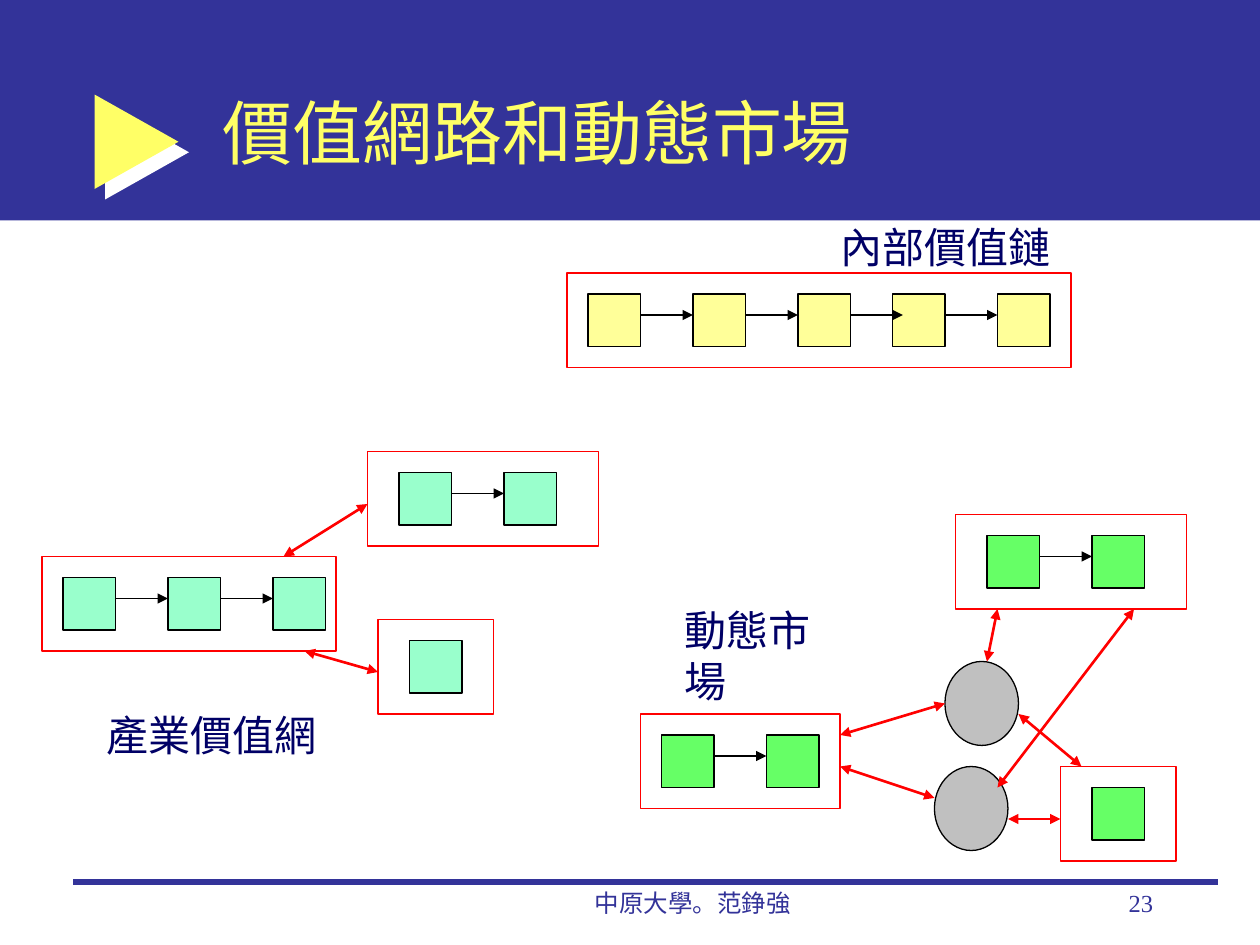
from typing import NamedTuple, Optional

from lxml.etree import SubElement
from pptx import Presentation
from pptx.dml.color import RGBColor
from pptx.enum.shapes import MSO_CONNECTOR, MSO_SHAPE
from pptx.enum.text import MSO_ANCHOR, MSO_AUTO_SIZE, PP_ALIGN
from pptx.oxml import parse_xml
from pptx.oxml.ns import nsdecls, qn
from pptx.shapes.autoshape import Shape
from pptx.slide import Slide
from pptx.util import Pt

INDIGO = RGBColor(0x33, 0x33, 0x99)
NAVY = RGBColor(0x00, 0x00, 0x66)
BRIGHT_YELLOW = RGBColor(0xFF, 0xFF, 0x66)
PALE_YELLOW = RGBColor(0xFF, 0xFF, 0x99)
MINT = RGBColor(0x99, 0xFF, 0xCC)
GREEN = RGBColor(0x66, 0xFF, 0x66)
GREY = RGBColor(0xC0, 0xC0, 0xC0)
RED = RGBColor(0xFF, 0x00, 0x00)
BLACK = RGBColor(0x00, 0x00, 0x00)

TITLE_FONT = "Noto Sans CJK SC"
TEXT_FONT = "Times New Roman"

STEP_SIZE = 30
STEP_GAP = 30
STEP_INSET = 12
ARROW_INSET = 24
CHAIN_HEIGHT = 54
THIN = 0.75


class Area(NamedTuple):
    left: float
    top: float
    width: float
    height: float


class Chain(NamedTuple):
    """A framed row of activities, each pointing to the next."""
    left: float
    top: float
    width: float
    step_lefts: tuple[float, ...]
    color: RGBColor


class Link(NamedTuple):
    x1: float
    y1: float
    x2: float
    y2: float


class Label(NamedTuple):
    text: str
    area: Area
    size: float
    color: RGBColor
    align: PP_ALIGN = PP_ALIGN.LEFT
    wrap: bool = True


CHAINS = (
    Chain(324, 156, 288, (336, 396, 456, 510, 570), PALE_YELLOW),
    Chain(24, 318, 168, (36, 96, 156), MINT),
    Chain(210, 258, 132, (228, 288), MINT),
    Chain(216, 354, 66, (234,), MINT),
    Chain(366, 408, 114, (378, 438), GREEN),
    Chain(546, 294, 132, (564, 624), GREEN),
    Chain(606, 438, 66, (624,), GREEN),
)
MARKETS = (Area(540, 378, 42, 48), Area(534, 438, 42, 48))
LINKS = (
    Link(162, 318, 210, 288),
    Link(174, 372, 216, 384),
    Link(480, 420, 540, 402),
    Link(480, 438, 534, 456),
    Link(564, 378, 570, 348),
    Link(582, 408, 618, 438),
    Link(576, 468, 606, 468),
    Link(570, 450, 648, 348),
)
LABELS = (
    Label("內部價值鏈", Area(473, 123, 135, 36), 24, NAVY, wrap=False),
    Label("產業價值網", Area(54, 402, 135, 36), 24, NAVY, wrap=False),
    Label("動態市場", Area(384, 342, 110, 36), 24, NAVY, wrap=False),
    Label("中原大學。范錚強", Area(282, 504, 228, 36), 14, INDIGO, PP_ALIGN.CENTER),
    Label("23", Area(516, 504, 150, 36), 14, INDIGO, PP_ALIGN.RIGHT),
)


def add_figure(slide: Slide, preset: MSO_SHAPE, area: Area,
               fill: Optional[RGBColor], outline: Optional[RGBColor]) -> Shape:
    figure = slide.shapes.add_shape(preset, *map(Pt, area))
    figure.shadow.inherit = False
    if fill is None:
        figure.fill.background()
    else:
        figure.fill.solid()
        figure.fill.fore_color.rgb = fill
    if outline is None:
        figure.line.fill.background()
    else:
        figure.line.color.rgb = outline
        figure.line.width = Pt(THIN)
    return figure


def add_link(slide: Slide, link: Link, color: RGBColor, width: float,
             arrowheads: tuple[str, ...] = ()) -> None:
    """Draw a line; arrowheads names its ends, headEnd being the start."""
    connector = slide.shapes.add_connector(MSO_CONNECTOR.STRAIGHT, *map(Pt, link))
    connector.line.color.rgb = color
    connector.line.width = Pt(width)
    outline = connector.line._get_or_add_ln()
    for end in arrowheads:
        SubElement(outline, qn(f"a:{end}"), type="triangle")
    SubElement(connector.element.spPr, qn("a:effectLst"))


def add_chain(slide: Slide, chain: Chain) -> None:
    for left in chain.step_lefts:
        step = Area(left, chain.top + STEP_INSET, STEP_SIZE, STEP_SIZE)
        add_figure(slide, MSO_SHAPE.RECTANGLE, step, chain.color, BLACK)
    arrow_y = chain.top + ARROW_INSET
    for left in chain.step_lefts[:-1]:
        start = left + STEP_SIZE
        add_link(slide, Link(start, arrow_y, start + STEP_GAP, arrow_y),
                 BLACK, THIN, ("tailEnd",))
    frame = Area(chain.left, chain.top, chain.width, CHAIN_HEIGHT)
    add_figure(slide, MSO_SHAPE.RECTANGLE, frame, None, RED)


def add_label(slide: Slide, label: Label) -> None:
    frame = slide.shapes.add_textbox(*map(Pt, label.area)).text_frame
    frame.word_wrap = label.wrap
    if not label.wrap:
        frame.auto_size = MSO_AUTO_SIZE.SHAPE_TO_FIT_TEXT
    paragraph = frame.paragraphs[0]
    paragraph.text = label.text
    paragraph.alignment = label.align
    paragraph.font.name = TEXT_FONT
    paragraph.font.size = Pt(label.size)
    paragraph.font.color.rgb = label.color


def add_backdrop(slide: Slide) -> None:
    add_figure(slide, MSO_SHAPE.RECTANGLE, Area(0, 0, 720, 126), INDIGO, None)
    pointer = add_figure(slide, MSO_SHAPE.RIGHT_ARROW, Area(54, 54, 48, 54),
                         BRIGHT_YELLOW, None)
    pointer.adjustments[0] = 0.38
    pointer.adjustments[1] = 1
    pointer.element.spPr.find(qn("a:effectLst")).append(parse_xml(
        f'<a:outerShdw {nsdecls("a")} dist="{Pt(8.5)}" dir="2700000" algn="ctr" '
        'rotWithShape="0"><a:srgbClr val="FFFFFF"/></a:outerShdw>'))
    add_link(slide, Link(42, 504, 696, 504), INDIGO, 3)


def fill_title(slide: Slide) -> None:
    title = slide.shapes.title
    title.element.getparent().append(title.element)  # in front of the band
    title.left, title.top, title.width, title.height = map(Pt, (120, 30, 546, 90))
    frame = title.text_frame
    frame.auto_size = MSO_AUTO_SIZE.NONE
    frame.vertical_anchor = MSO_ANCHOR.MIDDLE
    paragraph = frame.paragraphs[0]
    paragraph.text = "價值網路和動態市場"
    paragraph.alignment = PP_ALIGN.LEFT
    paragraph.font.name = TITLE_FONT
    paragraph.font.size = Pt(40)
    paragraph.font.color.rgb = BRIGHT_YELLOW


def main() -> None:
    presentation = Presentation()
    presentation.slide_width, presentation.slide_height = Pt(720), Pt(540)
    slide = presentation.slides.add_slide(presentation.slide_layouts[5])
    add_backdrop(slide)
    fill_title(slide)
    for chain in CHAINS:
        add_chain(slide, chain)
    for market in MARKETS:
        add_figure(slide, MSO_SHAPE.OVAL, market, GREY, BLACK)
    for link in LINKS:
        add_link(slide, link, RED, 1.5, ("headEnd", "tailEnd"))
    for label in LABELS:
        add_label(slide, label)
    presentation.save("out.pptx")


if __name__ == "__main__":
    main()
